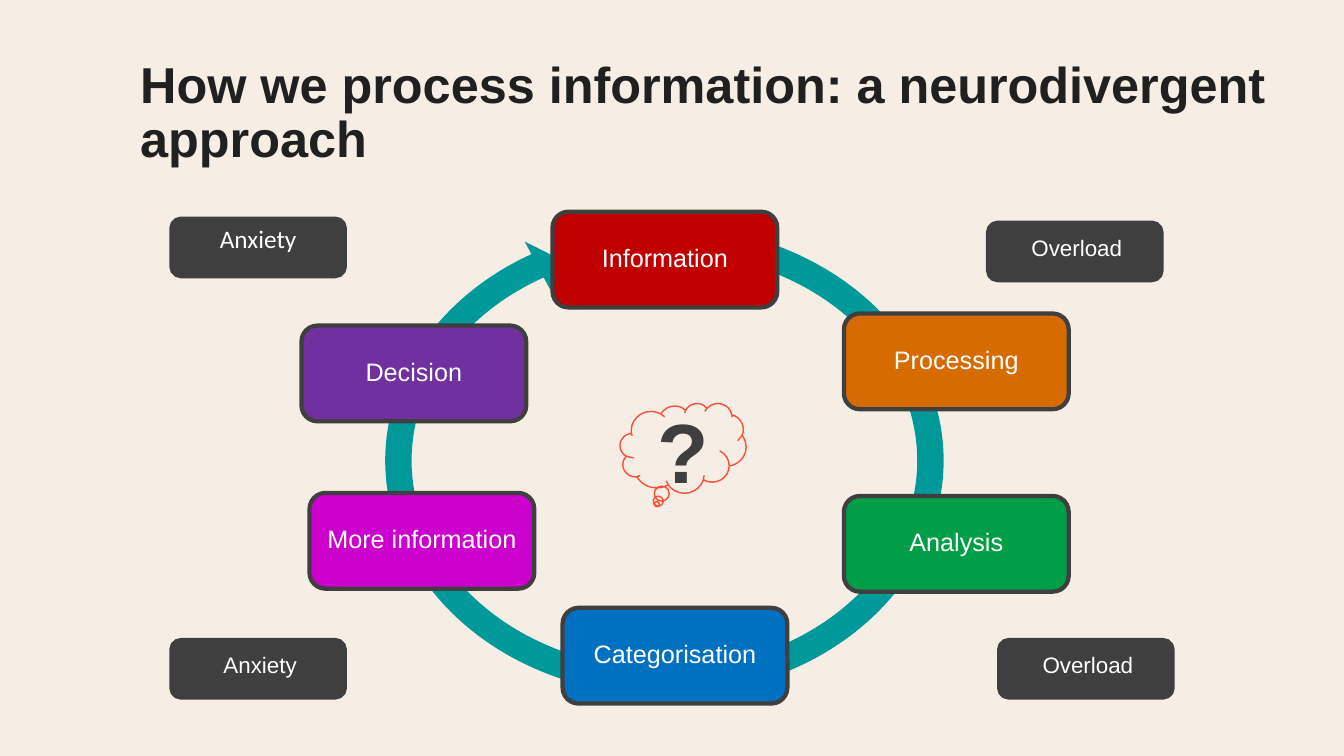
from pptx import Presentation
from pptx.dml.color import RGBColor
from pptx.enum.shapes import MSO_SHAPE
from pptx.enum.text import MSO_ANCHOR, PP_ALIGN
from pptx.util import Inches, Pt

ROUNDED = MSO_SHAPE.ROUNDED_RECTANGLE
ARROW = MSO_SHAPE.CIRCULAR_ARROW
CLOUD = MSO_SHAPE.CLOUD_CALLOUT
TOP, MIDDLE = MSO_ANCHOR.TOP, MSO_ANCHOR.MIDDLE
LEFT, CENTER = PP_ALIGN.LEFT, PP_ALIGN.CENTER

COLORS = {
    "background": "F6EEE5", "title": "202020", "dark": "3F3F3F", "white": "FFFFFF",
    "teal": "009999", "coral": "FF4E36", "red": "C00000", "orange": "D66B00",
    "green": "009E47", "blue": "0070C0", "magenta": "CC00CC", "purple": "7030A0",
}

TITLE = "How we process information: a neurodivergent approach"
TITLE_AREA = (1.29, 0.54, 11.55, 0.53)

# Text, left, top, fill
STAGES = [
    ("Information", 5.48, 2.1, "red"),
    ("Processing", 8.37, 3.11, "orange"),
    ("Analysis", 8.37, 4.92, "green"),
    ("Categorisation", 5.58, 6.03, "blue"),
    ("More information", 3.07, 4.89, "magenta"),
    ("Decision", 2.99, 3.23, "purple"),
]
STAGE_SIZE = (2.23, 0.95)

# Text, left, top, font, size, anchor, insets (left, top, right, bottom)
RAISED = (0.11, 0.05, 0.07, 0.09)
PLAIN = (0.1, 0.05, 0.1, 0.05)
FEELINGS = [
    ("Overload", 9.8, 2.21, "Arial", 16, MIDDLE, RAISED),
    ("Overload", 9.91, 6.35, "Arial", 16, MIDDLE, RAISED),
    ("Anxiety", 1.7, 6.35, "Arial", 16, MIDDLE, RAISED),
    ("Anxiety", 1.7, 2.17, "Calibri", 18, TOP, PLAIN),
]
FEELING_SIZE = (1.72, 0.57)

CYCLE_AREA = (3.68, 2.1, 5.82, 4.94)
CYCLE_ADJUSTMENTS = (0.053, 3.126, 142.157, 171.343, 0.055)
QUESTION_AREA = (6.32, 3.91, 0.92, 1.09)
CLOUD_AREA = (6.15, 4, 1.25, 0.89)


def color(name):
    return RGBColor.from_string(COLORS[name])


def add_shape(slide, kind, area, fill=None, line=None, line_width=3.03):
    shape = slide.shapes.add_shape(kind, *map(Inches, area))
    shape.shadow.inherit = False
    if fill:
        shape.fill.solid()
        shape.fill.fore_color.rgb = color(fill)
    else:
        shape.fill.background()
    if line:
        shape.line.color.rgb = color(line)
        shape.line.width = Pt(line_width)
    else:
        shape.line.fill.background()
    return shape


def write(shape, text, size, ink="white", font="Arial", bold=False, align=CENTER,
          anchor=MIDDLE, insets=PLAIN, spacing=0.9):
    frame = shape.text_frame
    frame.word_wrap = True
    frame.vertical_anchor = anchor
    (frame.margin_left, frame.margin_top,
     frame.margin_right, frame.margin_bottom) = map(Inches, insets)
    para = frame.paragraphs[0]
    para.text = text
    para.alignment = align
    para.line_spacing = spacing
    para.font.name = font
    para.font.size = Pt(size)
    para.font.bold = bold
    para.font.color.rgb = color(ink)


def add_title(slide):
    title = slide.shapes.title
    title.left, title.top, title.width, title.height = map(Inches, TITLE_AREA)
    write(title, TITLE, 36, ink="title", bold=True, align=LEFT, anchor=TOP)


def add_feelings(slide):
    for text, left, top, font, size, anchor, insets in FEELINGS:
        tag = add_shape(slide, ROUNDED, (left, top, *FEELING_SIZE), "dark", "dark")
        write(tag, text, size, font=font, anchor=anchor, insets=insets)


def add_cycle(slide):
    arrow = add_shape(slide, ARROW, CYCLE_AREA, "teal")
    for index, value in enumerate(CYCLE_ADJUSTMENTS):
        arrow.adjustments[index] = value
    for text, left, top, fill in STAGES:
        stage = add_shape(slide, ROUNDED, (left, top, *STAGE_SIZE), fill, "dark")
        write(stage, text, 18, insets=(0.08, 0.08, 0.08, 0.08))


def add_question(slide):
    box = slide.shapes.add_textbox(*map(Inches, QUESTION_AREA))
    write(box, "?", 60, ink="dark", bold=True, anchor=TOP, spacing=1.0)
    add_shape(slide, CLOUD, CLOUD_AREA, line="coral", line_width=1)


def main():
    deck = Presentation()
    deck.slide_width, deck.slide_height = Inches(13.33), Inches(7.5)
    slide = deck.slides.add_slide(deck.slide_layouts[5])
    slide.background.fill.solid()
    slide.background.fill.fore_color.rgb = color("background")
    add_title(slide)
    add_feelings(slide)
    add_cycle(slide)
    add_question(slide)
    deck.save("out.pptx")


if __name__ == "__main__":
    main()
